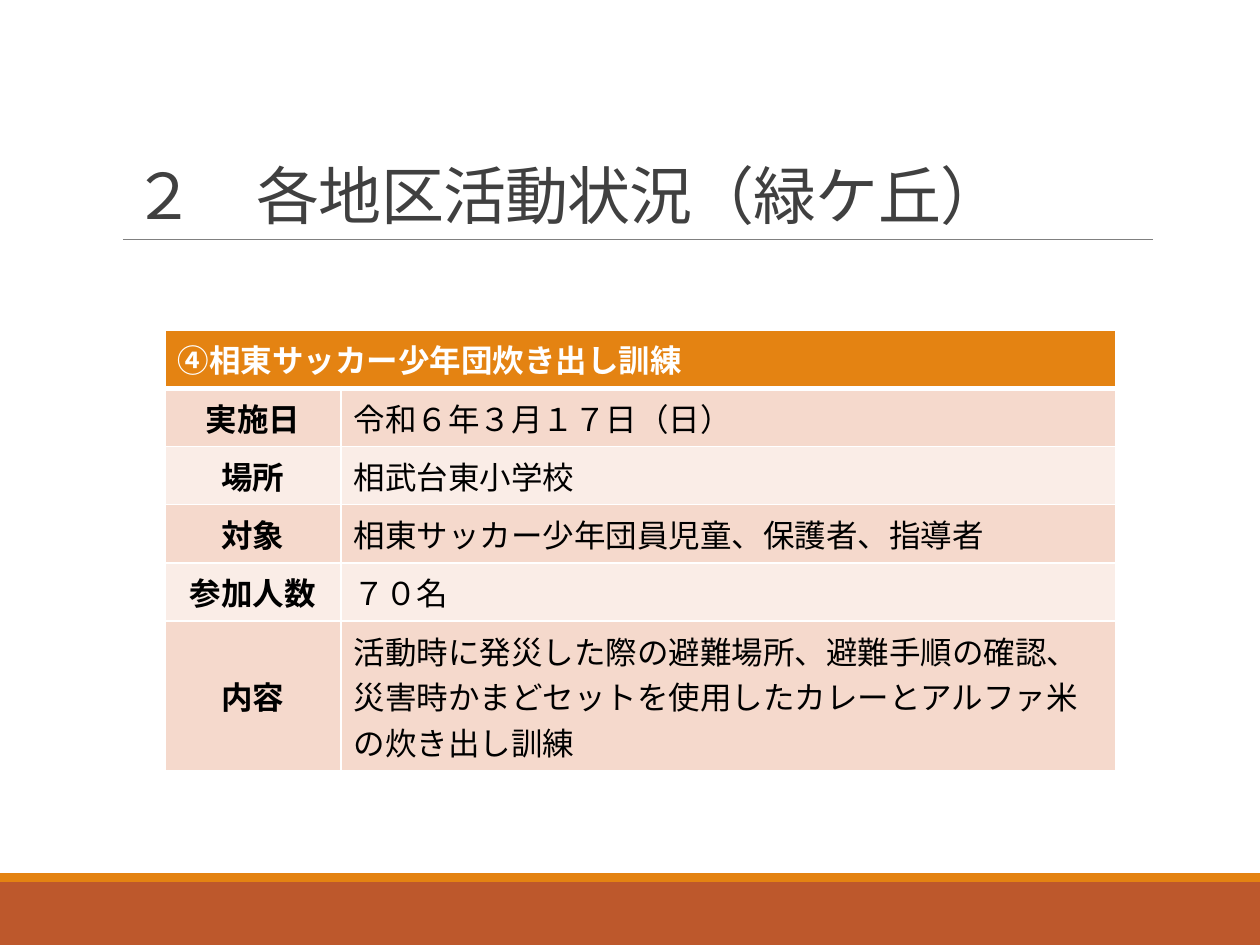
import pptx
import pptx.dml.color
import pptx.enum.lang
import pptx.enum.shapes
import pptx.enum.text
import pptx.oxml
import pptx.oxml.ns
import pptx.util

PX = 914400 / 126
ANCHOR = pptx.enum.text.MSO_ANCHOR
ALIGN = pptx.enum.text.PP_ALIGN


def color(value):
    return pptx.dml.color.RGBColor.from_string(value)


def add_run(paragraph, text, size, fill, bold=False):
    run = paragraph.add_run()
    run.text = text
    run.font.name = "Calibri"
    run.font.size = pptx.util.Pt(size)
    run.font.bold = bold
    run.font.color.rgb = color(fill)
    run.font.language_id = pptx.enum.lang.MSO_LANGUAGE_ID.JAPANESE
    return run


presentation = pptx.Presentation()
presentation.slide_width = round(1260 * PX)
presentation.slide_height = round(945 * PX)
slide = presentation.slides.add_slide(presentation.slide_layouts[5])

# Footer bands
for top, height, fill in [(882, 63, "BD582C"), (873, 9, "E48312")]:
    band = slide.shapes.add_shape(
        pptx.enum.shapes.MSO_SHAPE.RECTANGLE,
        0, round(top * PX), round(1260 * PX), round(height * PX))
    band.shadow.inherit = False
    band.fill.solid()
    band.fill.fore_color.rgb = color(fill)
    band.line.fill.background()

# Rule under the title
rule = slide.shapes.add_connector(
    pptx.enum.shapes.MSO_CONNECTOR.STRAIGHT,
    round(123 * PX), round(239 * PX), round(1153 * PX), round(239 * PX))
rule.line.color.rgb = color("808080")
rule.line.width = pptx.util.Pt(0.5)
rule._element.spPr.append(pptx.oxml.parse_xml(
    f"<a:effectLst {pptx.oxml.ns.nsdecls('a')}/>"))

# Title
title = slide.shapes.title
title.left, title.top = round(120 * PX), round(39 * PX)
title.width, title.height = round(1040 * PX), round(200 * PX)
title.text_frame.word_wrap = True
title.text_frame.auto_size = pptx.enum.text.MSO_AUTO_SIZE.NONE
title.text_frame.vertical_anchor = ANCHOR.BOTTOM
paragraph = title.text_frame.paragraphs[0]
paragraph.alignment = ALIGN.LEFT
paragraph.line_spacing = 0.85
run = add_run(paragraph, "２　各地区活動状況（緑ケ丘）", 36, "404040")
run.font._element.set("spc", "-50")

# Activity table
heading = "④相東サッカー少年団炊き出し訓練"
details = [
    ("実施日", ["令和６年３月１７日（日）"]),
    ("場所", ["相武台東小学校"]),
    ("対象", ["相東サッカー少年団員児童、保護者、指導者"]),
    ("参加人数", ["７０名"]),
    ("内容", ["活動時に発災した際の避難場所、避難手順の確認、",
            "災害時かまどセットを使用したカレーとアルファ米の炊き出し訓練"]),
]
rows = [(heading, [])] + details
table = slide.shapes.add_table(
    len(rows), 2, round(165 * PX), round(330 * PX),
    round(951 * PX), round(52 * len(rows) * PX)).table
table.columns[0].width = round(176 * PX)
table.columns[1].width = round(775 * PX)
table.cell(0, 0).merge(table.cell(0, 1))

for row, (label, lines) in enumerate(rows):
    is_heading = row == 0
    fill = "E48312" if is_heading else ("FAEDE7", "F5D9CC")[row % 2]
    for column, texts in enumerate([[label], lines]):
        cell = table.cell(row, column)

        # White borders, thicker around the heading's lower edge
        properties = cell._tc.get_or_add_tcPr()
        for side in ("L", "R", "T", "B"):
            thick = (row, side) in [(0, "B"), (1, "T")]
            width = pptx.util.Pt(3 if thick else 1)
            properties.append(pptx.oxml.parse_xml(
                f"<a:ln{side} {pptx.oxml.ns.nsdecls('a')} w='{width}'>"
                "<a:solidFill><a:srgbClr val='FFFFFF'/></a:solidFill>"
                f"</a:ln{side}>"))
        cell.fill.solid()
        cell.fill.fore_color.rgb = color(fill)

        # Labels are bold and centred, details are plain
        is_label = column == 0 and not is_heading
        if is_label:
            cell.vertical_anchor = ANCHOR.MIDDLE
        for index, text in enumerate(texts):
            frame = cell.text_frame
            paragraph = frame.add_paragraph() if index else frame.paragraphs[0]
            paragraph.alignment = ALIGN.CENTER if is_label else ALIGN.LEFT
            add_run(paragraph, text, 18,
                    "FFFFFF" if is_heading else "000000", column == 0)

presentation.save("out.pptx")
